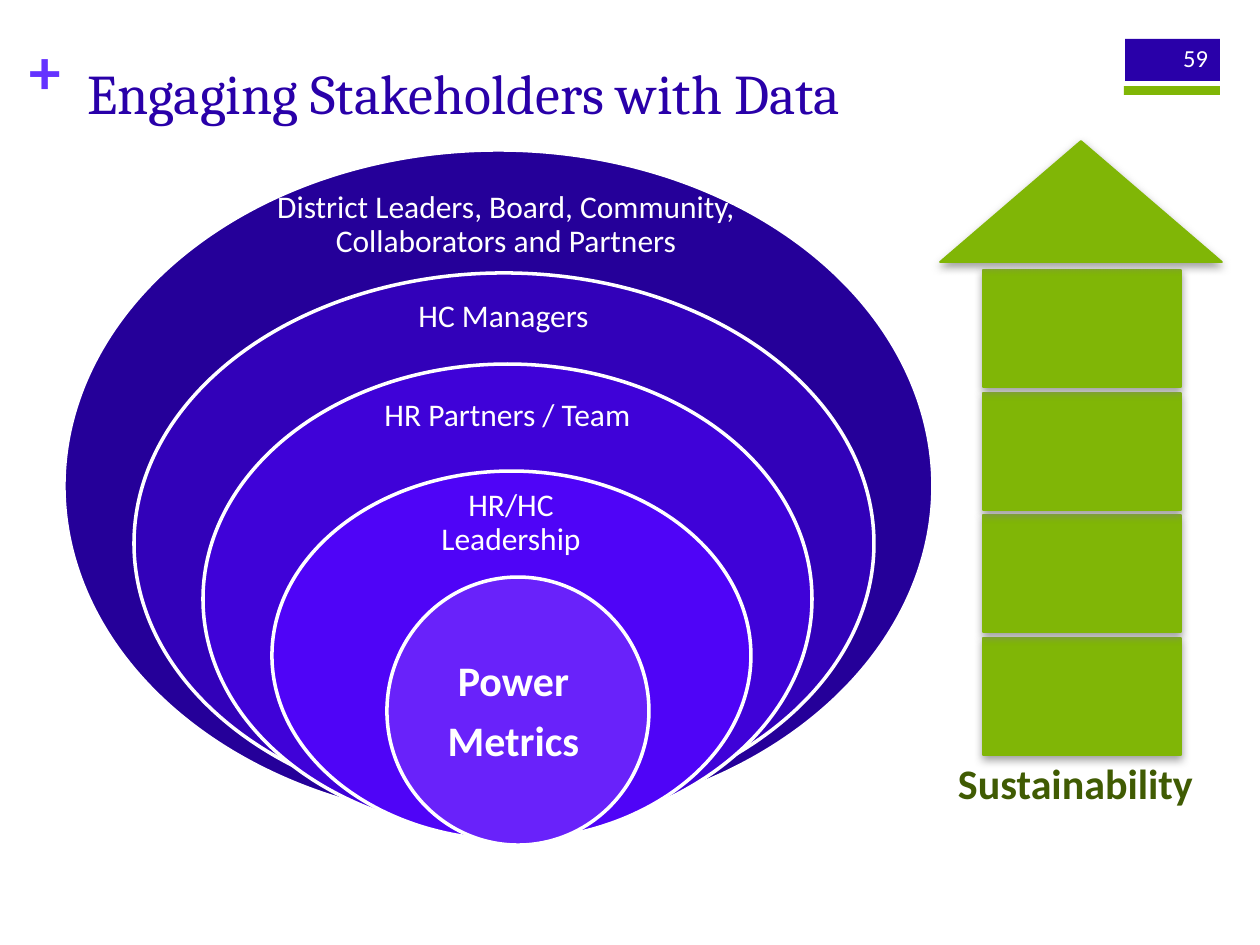
from lxml.etree import SubElement
from pptx import Presentation
from pptx.dml.color import RGBColor
from pptx.enum.shapes import MSO_SHAPE
from pptx.enum.text import MSO_ANCHOR, PP_ALIGN
from pptx.oxml.ns import qn
from pptx.util import Inches, Pt

PX = Inches(1) / 126

WHITE = RGBColor(0xFF, 0xFF, 0xFF)
INDIGO = RGBColor(0x29, 0x00, 0xA9)
VIOLET = RGBColor(0x64, 0x32, 0xFF)
GREEN = RGBColor(0x80, 0xB6, 0x06)
DARK_GREEN = RGBColor(0x40, 0x5B, 0x03)

# Ellipse box, fill, label box and label lines, from the outside in;
# boxes are relative to the top left of the whole diagram.
RINGS = [
    ((0, 0, 869, 672), RGBColor(0x25, 0x00, 0x99), (182, 42, 520, 67),
     ["District Leaders, Board, Community, Collaborators and Partners"]),
    ((70, 123, 740, 541), RGBColor(0x32, 0x01, 0xB9), (280, 136, 319, 62),
     ["HC Managers"]),
    ((139, 214, 609, 470), RGBColor(0x3F, 0x02, 0xD8), (286, 233, 315, 66),
     ["HR Partners / Team"]),
    ((208, 321, 479, 369), RGBColor(0x4F, 0x04, 0xF7), (318, 340, 258, 67),
     ["HR/HC Leadership"]),
    ((323, 427, 262, 268), RGBColor(0x69, 0x22, 0xFA), (335, 495, 229, 135),
     ["Power", "Metrics"]),
]


def emu(*lengths):
    return [round(length * PX) for length in lengths]


def shift(box, left, top):
    x, y, width, height = box
    return left + x, top + y, width, height


def add_figure(slide, preset, box, fill, line=None, line_width=1):
    figure = slide.shapes.add_shape(preset, *emu(*box))
    figure.shadow.inherit = False
    figure.fill.solid()
    figure.fill.fore_color.rgb = fill
    if line is None:
        figure.line.fill.background()
    else:
        figure.line.color.rgb = line
        figure.line.width = Pt(line_width)
    return figure


def add_text(slide, box, lines, size, color, font="Calibri", bold=False,
             align=PP_ALIGN.LEFT, anchor=MSO_ANCHOR.TOP, insets=(13, 6),
             wrap=True, spacing=None, after=0):
    """Add a text box; after is the gap below each line as a share of size."""
    frame = slide.shapes.add_textbox(*emu(*box)).text_frame
    frame.word_wrap = wrap
    frame.vertical_anchor = anchor
    side, end = emu(*insets)
    frame.margin_left = frame.margin_right = side
    frame.margin_top = frame.margin_bottom = end
    frame.text = "\n".join(lines)
    for paragraph in frame.paragraphs:
        paragraph.alignment = align
        if spacing:
            paragraph.line_spacing = spacing
            paragraph.space_after = Pt(size * after)
        paragraph.font.name = font
        paragraph.font.size = Pt(size)
        paragraph.font.bold = bold
        paragraph.font.color.rgb = color


def add_soft_shadow(figure):
    effects = figure._element.spPr.find(qn("a:effectLst"))
    shadow = SubElement(effects, qn("a:outerShdw"), blurRad=str(Pt(5)),
                        dist=str(Pt(2)), dir="5400000", rotWithShape="0")
    tint = SubElement(shadow, qn("a:srgbClr"), val="808080")
    SubElement(tint, qn("a:alpha"), val="75000")


def add_heading(slide, left, top):
    add_text(slide, (left, top, 37, 77), ["+"], 36, VIOLET, bold=True,
             insets=(0, 0))
    add_text(slide, (left + 44, top + 21, 1090, 154),
             ["Engaging Stakeholders with Data"], 32, INDIGO, font="Cambria")


def add_page_badge(slide, left, top):
    add_figure(slide, MSO_SHAPE.RECTANGLE, (left + 1, top, 95, 42), INDIGO)
    add_figure(slide, MSO_SHAPE.RECTANGLE, (left, top + 47, 96, 9), GREEN)
    add_text(slide, (left + 20, top - 6, 77, 50), ["59"], 14, WHITE,
             align=PP_ALIGN.RIGHT, anchor=MSO_ANCHOR.MIDDLE)


def add_stakeholder_rings(slide, left, top):
    for ring, fill, label, lines in RINGS:
        core = ring == RINGS[-1][0]
        inset = 28 if core else 20
        add_figure(slide, MSO_SHAPE.OVAL, shift(ring, left, top), fill, WHITE, 2)
        add_text(slide, shift(label, left, top), lines, 24 if core else 18,
                 WHITE, bold=core, align=PP_ALIGN.CENTER,
                 anchor=MSO_ANCHOR.MIDDLE, insets=(inset, inset),
                 spacing=0.9, after=0.35)


def add_sustainability_arrow(slide, left, top):
    add_text(slide, (left + 4, top + 611, 263, 63), ["Sustainability"], 24,
             DARK_GREEN, bold=True, align=PP_ALIGN.CENTER, wrap=False)
    blocks = [(MSO_SHAPE.RECTANGLE, (43, 129 + round(122.6 * row), 198, 117))
              for row in reversed(range(4))]
    head = (MSO_SHAPE.ISOSCELES_TRIANGLE, (0, 0, 282, 121))
    for preset, box in [*blocks, head]:
        add_soft_shadow(add_figure(slide, preset, shift(box, left, top),
                                   GREEN, GREEN))


def main():
    deck = Presentation()
    deck.slide_width, deck.slide_height = emu(1260, 945)
    slide = deck.slides.add_slide(deck.slide_layouts[6])
    add_page_badge(slide, 1124, 39)
    add_heading(slide, 30, 32)
    add_stakeholder_rings(slide, 64, 150)
    add_sustainability_arrow(slide, 940, 141)
    deck.save("out.pptx")


if __name__ == "__main__":
    main()
